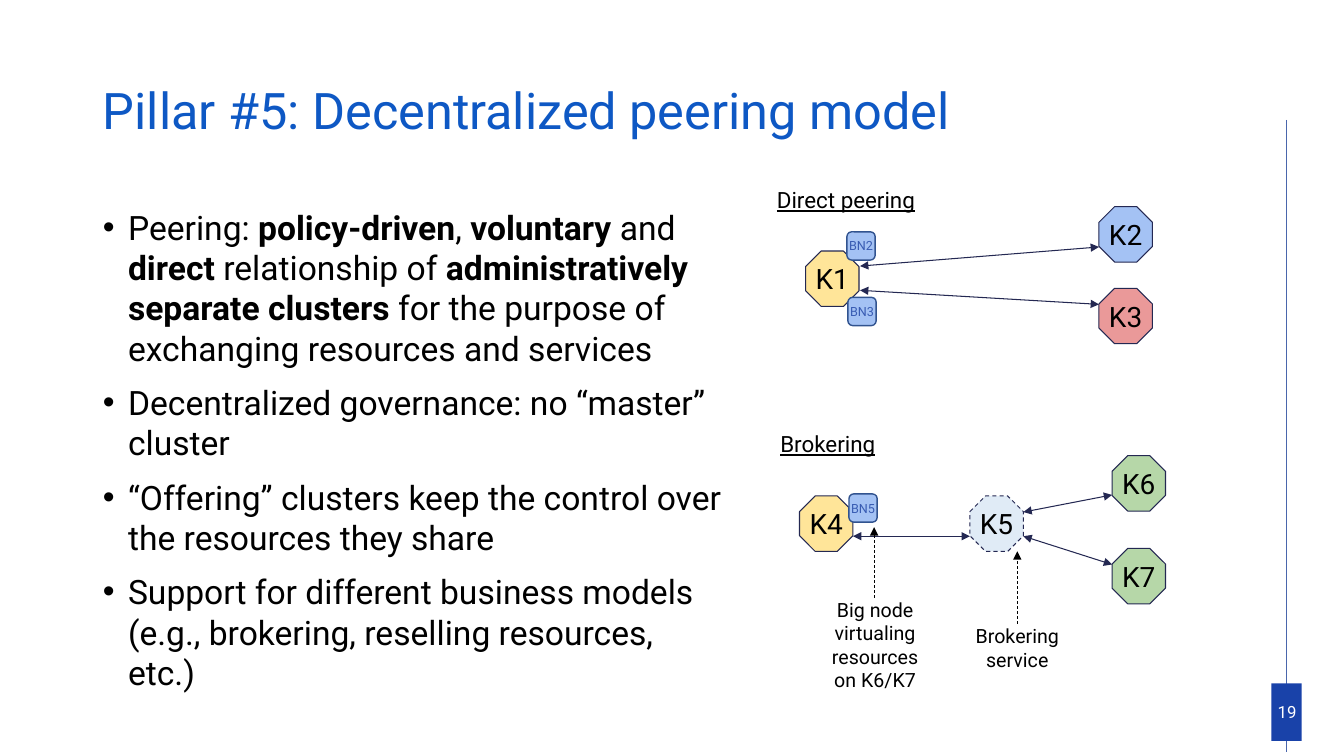
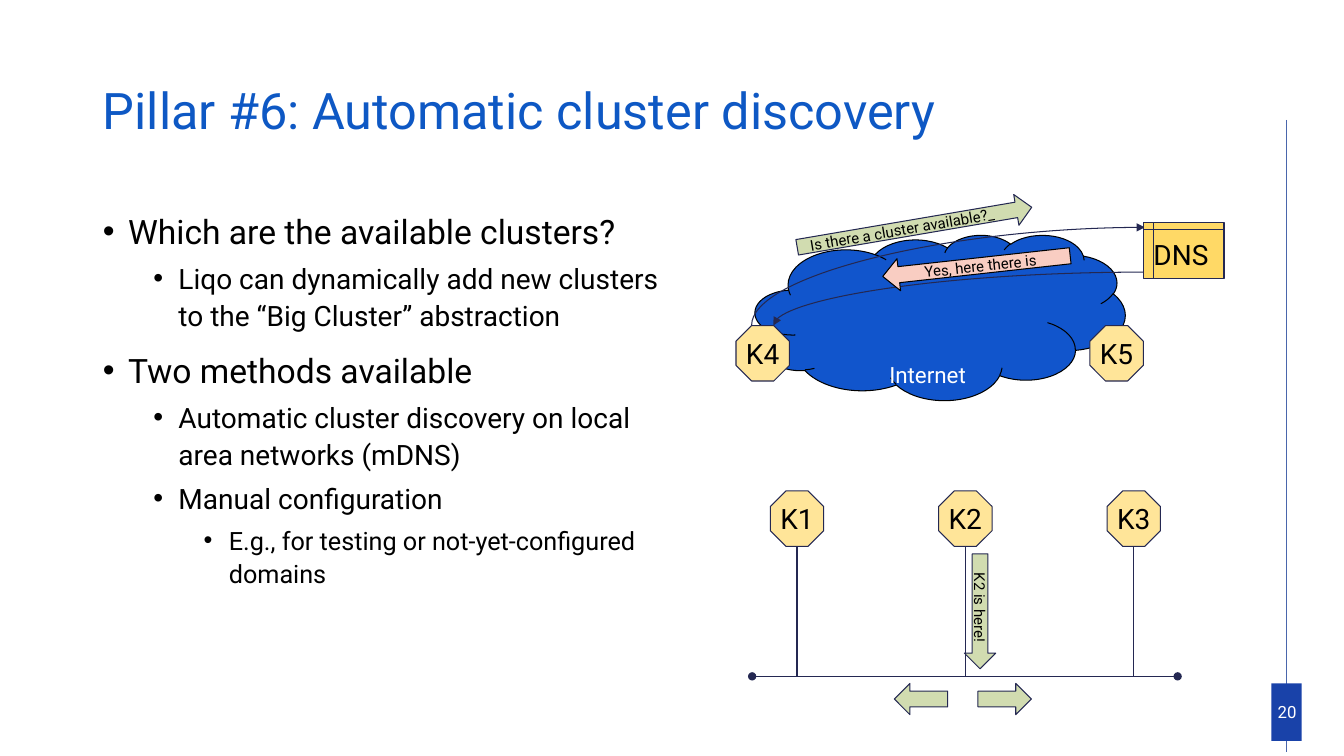
from lxml.etree import SubElement
from pptx import Presentation
from pptx.dml.color import RGBColor
from pptx.enum.dml import MSO_LINE
from pptx.enum.shapes import MSO_CONNECTOR as Link, MSO_SHAPE as Shape
from pptx.enum.text import MSO_ANCHOR as Anchor, MSO_AUTO_SIZE as AutoSize, PP_ALIGN as Align
from pptx.oxml.ns import qn
from pptx.util import Inches, Pt

FONT = "Roboto"
BLACK, WHITE, INK = "000000", "FFFFFF", "242852"
TITLE_BLUE, RULE_BLUE, BAND_BLUE = "0E58C4", "4A66AC", "1942A9"
YELLOW, BLUE, RED, GREEN, PALE = "FFE599", "A4C2F4", "EA9999", "B6D7A8", "E0EBF6"
BADGE_EDGE, BADGE_TEXT = "31538F", "395CB3"
CLOUD_BLUE, DNS_GOLD, ARROW_GREEN, ARROW_PINK = "1155CC", "FFD966", "D1DCB0", "F9CDC2"

NODE_W, NODE_H = 0.53, 0.55
BULLET_SIZES = (24, 20, 18)


def rgb(value):
    return RGBColor.from_string(value)


def inches(*lengths):
    return [Inches(length) for length in lengths]


def style_runs(paragraph, size, color):
    for run in paragraph.runs:
        run.font.name = FONT
        run.font.size = Pt(size)
        run.font.color.rgb = rgb(color)


def write(frame, text, size, color=BLACK, align=Align.CENTER,
          anchor=Anchor.MIDDLE, margins=(0, 0), wrap=True):
    """Fill a text frame; margins are (left and right, top and bottom)."""
    frame.word_wrap = wrap
    frame.vertical_anchor = anchor
    frame.margin_left = frame.margin_right = Inches(margins[0])
    frame.margin_top = frame.margin_bottom = Inches(margins[1])
    frame.text = text
    frame.paragraphs[0].alignment = align
    style_runs(frame.paragraphs[0], size, color)


def label(slide, text, box, size, color=BLACK, underline=None, anchor=Anchor.TOP):
    frame = slide.shapes.add_textbox(*inches(*box)).text_frame
    write(frame, text, size, color, anchor=anchor)
    frame.paragraphs[0].runs[0].font.underline = underline


def block(slide, kind, box, fill, edge=INK, weight=0.75, rotation=0):
    shape = slide.shapes.add_shape(kind, *inches(*box))
    shape.shadow.inherit = False
    shape.fill.solid()
    shape.fill.fore_color.rgb = rgb(fill)
    if edge:
        shape.line.color.rgb = rgb(edge)
        shape.line.width = Pt(weight)
    else:
        shape.line.fill.background()
    shape.rotation = rotation
    return shape


def cluster(slide, name, left, top, fill=YELLOW, dashed=False):
    node = block(slide, Shape.OCTAGON, (left, top, NODE_W, NODE_H), fill)
    if dashed:
        node.line.dash_style = MSO_LINE.DASH
    write(node.text_frame, name, 20, wrap=False)


def big_node(slide, name, left, top):
    badge = block(slide, Shape.ROUNDED_RECTANGLE, (left, top, 0.28, 0.28),
                  BLUE, BADGE_EDGE, 1)
    write(badge.text_frame, name, 9, BADGE_TEXT, wrap=False)


def message(slide, kind, text, box, fill, rotation, edge=INK, align=Align.CENTER):
    arrow = block(slide, kind, box, fill, edge, rotation=rotation)
    write(arrow.text_frame, text, 10.7, align=align, margins=(0.13, 0.13))


def link(slide, start, end, color=INK, weight=0.75, head=None, tail=None,
         dashed=False, kind=Link.STRAIGHT):
    connector = slide.shapes.add_connector(kind, *inches(*start, *end))
    connector.line.color.rgb = rgb(color)
    connector.line.width = Pt(weight)
    if dashed:
        connector.line.dash_style = MSO_LINE.DASH
    properties = connector.element.spPr
    outline = properties.find(qn("a:ln"))
    for tag, end_type in (("a:headEnd", head), ("a:tailEnd", tail)):
        if end_type:
            SubElement(outline, qn(tag)).set("type", end_type)
    SubElement(properties, qn("a:effectLst"))
    return connector


def curve(slide, start, end, rotation=0):
    """Quarter-bend arrow; start and end span its frame before rotation."""
    connector = link(slide, start, end, tail="triangle", kind=Link.CURVE)
    properties = connector.element.spPr
    properties.find(qn("a:prstGeom")).set("prst", "curvedConnector2")
    if rotation:
        properties.find(qn("a:xfrm")).set("rot", str(rotation * 60000))


def bullet(paragraph, level, text, space_before, line_spacing):
    """Write one list item; parts between ** marks are bold."""
    paragraph.level = level
    paragraph.alignment = Align.LEFT
    paragraph.space_before = Pt(space_before)
    paragraph.line_spacing = line_spacing
    properties = paragraph._p.get_or_add_pPr()
    properties.set("marL", str(Inches(0.25 + 0.5 * level)))
    properties.set("indent", str(Inches(-0.25)))
    SubElement(properties, qn("a:buFont")).set("typeface", "Arial")
    SubElement(properties, qn("a:buChar")).set("char", "•")
    for index, part in enumerate(text.split("**")):
        run = paragraph.add_run()
        run.text = part
        run.font.bold = index % 2 == 1
    style_runs(paragraph, BULLET_SIZES[level], BLACK)


def place(placeholder, box):
    placeholder.left, placeholder.top, placeholder.width, placeholder.height = inches(*box)
    placeholder.text_frame.auto_size = AutoSize.NONE


def add_page(prs, number, title, items, body_width, line_spacing):
    """Add a slide with its title, list, side rule and page number."""
    slide = prs.slides.add_slide(prs.slide_layouts[1])
    link(slide, (12.76, 1.19), (12.76, 7.46), RULE_BLUE, 0.5)
    block(slide, Shape.RECTANGLE, (12.61, 6.78, 0.3, 0.57), BAND_BLUE, edge=None)
    label(slide, str(number), (12.54, 6.91, 0.45, 0.3), 12, WHITE, anchor=Anchor.MIDDLE)

    heading, body = slide.shapes.title, slide.placeholders[1]
    place(heading, (0.92, 0.4, 11.5, 1.45))
    write(heading.text_frame, title, 36, TITLE_BLUE, Align.LEFT, margins=(0.1, 0.05))
    heading.text_frame.paragraphs[0].line_spacing = 0.9

    place(body, (0.92, 2, body_width, 4.76))
    frame = body.text_frame
    frame.vertical_anchor = Anchor.TOP
    for index, (level, text) in enumerate(items):
        paragraph = frame.add_paragraph() if index else frame.paragraphs[0]
        gap = 0 if index == 0 else 5 if level else 10
        bullet(paragraph, level, text, gap, line_spacing)
    return slide


def peering_slide(prs):
    slide = add_page(prs, 19, "Pillar #5: Decentralized peering model", [
        (0, "Peering: **policy-driven**, **voluntary** and **direct** relationship of "
            "**administratively separate clusters** for the purpose of exchanging "
            "resources and services"),
        (0, "Decentralized governance: no “master” cluster"),
        (0, "“Offering” clusters keep the control over the resources they share"),
        (0, "Support for different business models (e.g., brokering, reselling "
            "resources, etc.)"),
    ], 6.34, 1.0)

    label(slide, "Direct peering", (7.47, 1.85, 1.84, 0.27), 16, underline=True)
    label(slide, "Brokering", (7.29, 4.27, 1.84, 0.27), 16, underline=True)
    label(slide, "Big node virtualing resources on K6/K7", (8.13, 5.93, 1.1, 0.94), 14)
    label(slide, "Brokering service", (9.54, 6.19, 1.1, 0.47), 14)

    for name, left, top, fill in (
            ("K1", 7.99, 2.49, YELLOW), ("K2", 10.9, 2.05, BLUE), ("K3", 10.9, 2.86, RED),
            ("K4", 7.93, 4.92, YELLOW), ("K5", 9.62, 4.92, PALE),
            ("K6", 11.03, 4.52, GREEN), ("K7", 11.03, 5.44, GREEN)):
        cluster(slide, name, left, top, fill, dashed=name == "K5")

    for start, end in (((8.53, 2.64), (10.9, 2.45)), ((8.53, 2.88), (10.9, 3.02)),
                       ((8.46, 5.32), (9.62, 5.32)), ((10.15, 5.08), (11.03, 4.91)),
                       ((10.15, 5.32), (11.03, 5.6))):
        link(slide, start, end, head="triangle", tail="triangle")

    for name, left, top in (("BN2", 8.4, 2.3), ("BN3", 8.41, 2.95), ("BN5", 8.42, 4.9)):
        big_node(slide, name, left, top)

    for x, bottom, top in ((8.67, 5.93, 5.23), (10.09, 6.19, 5.47)):
        link(slide, (x, bottom), (x, top), BLACK, 0.5, tail="triangle", dashed=True)


def draw_dns_discovery(slide):
    block(slide, Shape.CLOUD, (7.49, 2.33, 3.67, 1.64), CLOUD_BLUE, BLACK)
    label(slide, "Internet", (8.28, 3.58, 1.84, 0.27), 16, WHITE)
    cluster(slide, "K4", 7.3, 3.23)
    cluster(slide, "K5", 10.81, 3.23)
    curve(slide, (8.92, 0.79), (9.89, 4.69), rotation=270)
    curve(slide, (11.34, 2.7), (7.67, 3.23))
    message(slide, Shape.RIGHT_ARROW, "Is there a cluster available?_",
            (7.89, 2.1, 2.36, 0.31), ARROW_GREEN, 350.3, align=Align.LEFT)
    message(slide, Shape.LEFT_ARROW, "Yes, here there is",
            (8.75, 2.48, 1.87, 0.32), ARROW_PINK, 353.7, edge=BLACK)
    dns = block(slide, Shape.FLOWCHART_INTERNAL_STORAGE, (11.34, 2.21, 0.8, 0.55), DNS_GOLD)
    write(dns.text_frame, "DNS", 20, align=Align.LEFT, margins=(0, 0.13))


def draw_local_discovery(slide):
    network_y = 6.71
    link(slide, (7.46, network_y), (11.68, network_y), head="oval", tail="oval")
    for index, name in enumerate(("K1", "K2", "K3")):
        left = 7.64 + 1.67 * index
        center = left + NODE_W / 2
        link(slide, (center, 5.36), (center, network_y))
        cluster(slide, name, left, 4.87)
    message(slide, Shape.RIGHT_ARROW, "K2 is here!", (9.15, 5.91, 1.14, 0.31),
            ARROW_GREEN, 90)
    for kind, left in ((Shape.LEFT_ARROW, 8.87), (Shape.RIGHT_ARROW, 9.7)):
        block(slide, kind, (left, 6.78, 0.53, 0.31), ARROW_GREEN)


def discovery_slide(prs):
    slide = add_page(prs, 20, "Pillar #6: Automatic cluster discovery", [
        (0, "Which are the available clusters?"),
        (1, "Liqo can dynamically add new clusters to the “Big Cluster” abstraction"),
        (0, "Two methods available"),
        (1, "Automatic cluster discovery on local area networks (mDNS)"),
        (1, "Manual configuration"),
        (2, "E.g., for testing or not-yet-configured domains"),
    ], 5.93, 1.1)
    draw_dns_discovery(slide)
    draw_local_discovery(slide)


def main():
    prs = Presentation()
    prs.slide_width, prs.slide_height = inches(13.33, 7.5)
    peering_slide(prs)
    discovery_slide(prs)
    prs.save("out.pptx")


if __name__ == "__main__":
    main()
